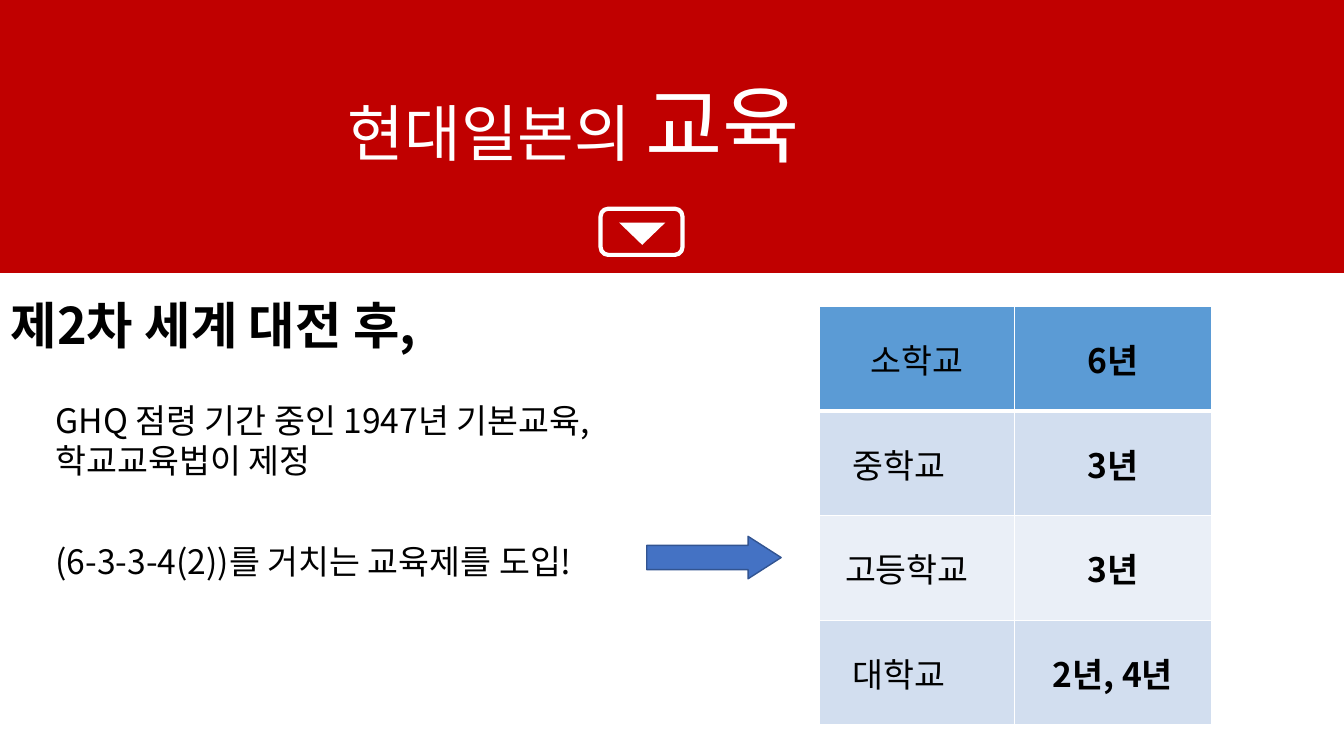
from dataclasses import dataclass

from pptx import Presentation
from pptx.dml.color import RGBColor
from pptx.enum.shapes import MSO_SHAPE as Preset
from pptx.enum.text import MSO_ANCHOR as Anchor, PP_ALIGN as Align
from pptx.oxml.ns import qn
from pptx.util import Inches, Pt
from lxml.etree import SubElement

COLUMNS, ROWS = 160, 90
SLIDE_WIDTH, SLIDE_HEIGHT = Inches(13.33), Inches(7.5)


@dataclass(frozen=True)
class Theme:
    font: str = "Noto Sans CJK KR"
    white: str = "FFFFFF"
    black: str = "000000"
    red: str = "C00000"
    arrow: str = "4472C4"
    arrow_edge: str = "325491"
    header: str = "5B9BD5"
    bands: tuple = ("D2DEEF", "EAEFF7")
    emphasis_size: int = 60
    title_size: int = 44
    heading_size: int = 36
    text_size: int = 24


THEME = Theme()


@dataclass(frozen=True)
class Box:
    left: float
    top: float
    width: float
    height: float

    def inner(self, left, top, width, height):
        return Box(self.left + left, self.top + top, width, height)

    def lengths(self):
        return (across(self.left), down(self.top),
                across(self.width), down(self.height))


def across(columns):
    return round(SLIDE_WIDTH * columns / COLUMNS)


def down(rows):
    return round(SLIDE_HEIGHT * rows / ROWS)


def rgb(color):
    return RGBColor.from_string(color)


def add_run(paragraph, wording, size, color=THEME.black, bold=False):
    run = paragraph.add_run()
    run.text = wording
    run.font.name = THEME.font
    run.font.size = Pt(size)
    run.font.bold = bold
    run.font.color.rgb = rgb(color)
    SubElement(run._r.get_or_add_rPr(), qn("a:ea"), typeface=THEME.font)


def indent(paragraph, columns=0):
    properties = paragraph._p.get_or_add_pPr()
    properties.set("marL", str(across(columns)))
    properties.set("indent", "0")
    return properties


def move(placeholder, box):
    (placeholder.left, placeholder.top,
     placeholder.width, placeholder.height) = box.lengths()


def add_preset(slide, preset, box, fill=None, edge=None, edge_width=1):
    shape = slide.shapes.add_shape(preset, *box.lengths())
    shape.shadow.inherit = False
    if fill:
        shape.fill.solid()
        shape.fill.fore_color.rgb = rgb(fill)
    else:
        shape.fill.background()
    if edge:
        shape.line.color.rgb = rgb(edge)
        shape.line.width = Pt(edge_width)
    else:
        shape.line.fill.background()
    return shape


def build_banner(slide, box):
    backdrop = add_preset(slide, Preset.RECTANGLE, box, THEME.red)
    slide.shapes._spTree.insert(2, backdrop._element)

    title = slide.shapes.title
    move(title, box.inner(30.2, 4.3, 122.2, 22.3))
    title.text_frame.vertical_anchor = Anchor.MIDDLE
    topic = title.text_frame.paragraphs[0]
    topic.alignment = Align.LEFT
    topic.line_spacing = 0.9
    indent(topic, 10)
    add_run(topic, "현대일본의 ", THEME.title_size, THEME.white)
    add_run(topic, "교육", THEME.emphasis_size, THEME.white)

    pointer = add_preset(slide, Preset.ISOSCELES_TRIANGLE,
                         box.inner(73.7, 26.5, 5.5, 2.65), THEME.white)
    pointer.rotation = 180
    add_preset(slide, Preset.ROUNDED_RECTANGLE, box.inner(71.5, 24.85, 9.75, 5.5),
               edge=THEME.white, edge_width=3)


def build_reform_story(slide, box):
    heading = slide.shapes.add_textbox(*box.inner(0.1, 1.9, 62.6, 8.5).lengths())
    heading.text_frame.word_wrap = True
    add_run(heading.text_frame.paragraphs[0], "제2차 세계 대전 후,",
            THEME.heading_size, bold=True)

    reforms = slide.placeholders[1]
    move(reforms, box.inner(5.4, 14.5, 71.6, 24))
    frame = reforms.text_frame
    frame.vertical_anchor = Anchor.TOP
    statements = (("GHQ 점령 기간 중인 1947년 기본교육, 학교교육법이 제정", 0),
                  ("(6-3-3-4(2))를 거치는 교육제를 도입!", 43))
    for number, (wording, gap) in enumerate(statements):
        statement = frame.add_paragraph() if number else frame.paragraphs[0]
        statement.space_before = Pt(gap)
        SubElement(indent(statement), qn("a:buNone"))
        add_run(statement, wording, THEME.text_size)

    arrow = add_preset(slide, Preset.RIGHT_ARROW, box.inner(77, 31.35, 16, 5.05),
                       THEME.arrow, THEME.arrow_edge)
    arrow.adjustments[0] = 0.57
    arrow.adjustments[1] = 0.78


def outline_cell(cell, widths):
    properties = cell._tc.get_or_add_tcPr()
    for position, (side, width) in enumerate(widths.items()):
        border = properties.makeelement(qn(f"a:{side}"), {"w": str(Pt(width))})
        fill = SubElement(border, qn("a:solidFill"))
        SubElement(fill, qn("a:srgbClr"), val=THEME.white)
        properties.insert(position, border)


def build_school_years(slide, box):
    schools = (("소학교", "6년", None), ("중학교", "3년", 2.7),
               ("고등학교", "3년", 1.8), ("대학교", "2년, 4년", 2.7))
    table = slide.shapes.add_table(len(schools), 2, *box.lengths()).table
    table.columns[0].width = across(23.15)
    table.columns[1].width = across(box.width - 23.15)
    for row, (school, years, margin) in enumerate(schools):
        table.rows[row].height = down(box.height / len(schools))
        fill = THEME.bands[(row - 1) % 2] if row else THEME.header
        widths = {"lnL": 1, "lnR": 1, "lnT": 3 if row == 1 else 1,
                  "lnB": 1 if row else 3}
        for column, wording in enumerate((school, years)):
            cell = table.cell(row, column)
            cell.vertical_anchor = Anchor.MIDDLE
            cell.fill.solid()
            cell.fill.fore_color.rgb = rgb(fill)
            outline_cell(cell, widths)
            entry = cell.text_frame.paragraphs[0]
            if column == 0 and margin:
                entry.alignment = Align.LEFT
                indent(entry, margin)
            else:
                entry.alignment = Align.CENTER
            add_run(entry, wording, THEME.text_size, bold=column == 1)


def main():
    deck = Presentation()
    deck.slide_width, deck.slide_height = SLIDE_WIDTH, SLIDE_HEIGHT
    slide = deck.slides.add_slide(deck.slide_layouts[1])
    build_banner(slide, Box(0, 0, COLUMNS, 32.5))
    build_reform_story(slide, Box(0, 32.5, 95, 57.5))
    build_school_years(slide, Box(97.6, 36.5, 46.6, 49.8))
    deck.save("out.pptx")


if __name__ == "__main__":
    main()
